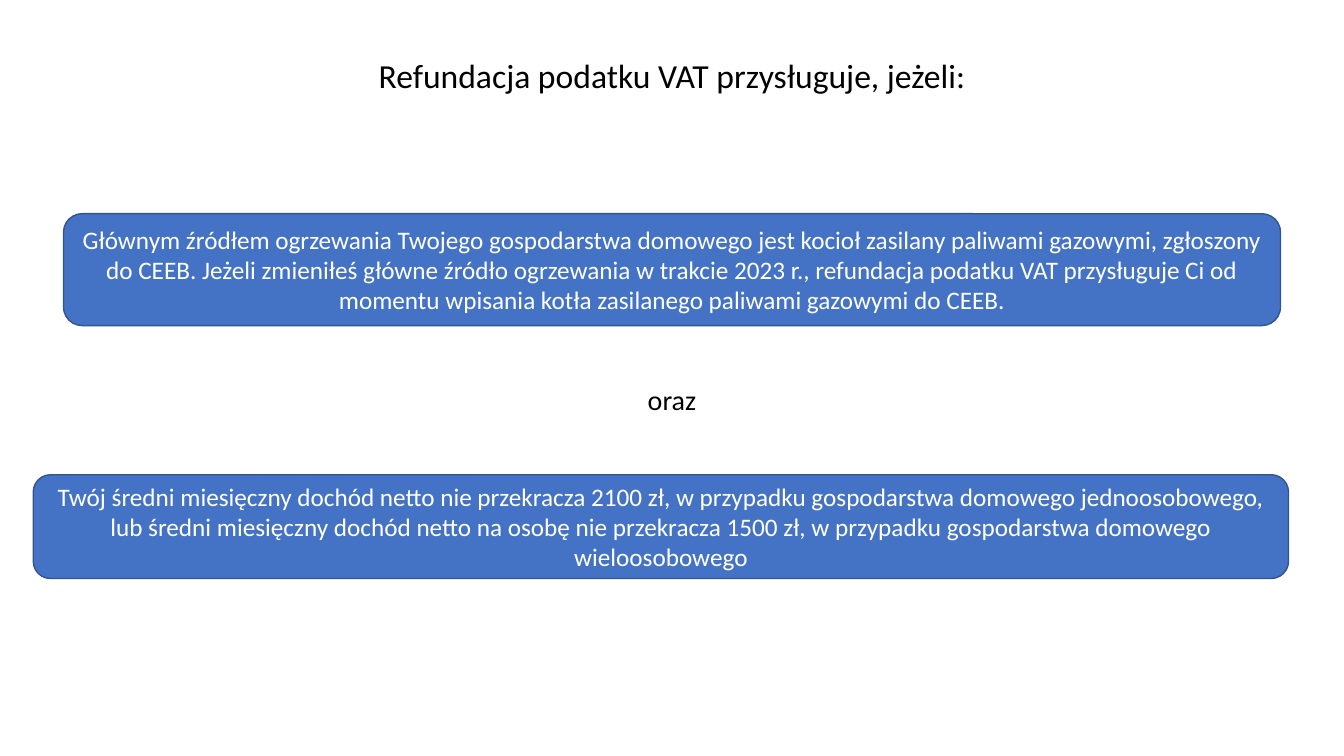
from pptx import Presentation, util as u
from pptx.dml.color import RGBColor
from pptx.enum import shapes, text

BLUE = RGBColor(0x44, 0x72, 0xC4)
NAVY = RGBColor(0x32, 0x54, 0x91)
WHITE = RGBColor(0xFF, 0xFF, 0xFF)
BLACK = RGBColor(0x00, 0x00, 0x00)

GAS_HEATING = (
    "Głównym źródłem ogrzewania Twojego gospodarstwa domowego jest kocioł "
    "zasilany paliwami gazowymi, zgłoszony do CEEB. Jeżeli zmieniłeś główne "
    "źródło ogrzewania w trakcie 2023 r., refundacja podatku VAT przysługuje "
    "Ci od momentu wpisania kotła zasilanego paliwami gazowymi do CEEB."
)
INCOME_LIMIT = (
    "Twój średni miesięczny dochód netto nie przekracza 2100 zł, w przypadku "
    "gospodarstwa domowego jednoosobowego, lub średni miesięczny dochód netto "
    "na osobę nie przekracza 1500 zł, w przypadku gospodarstwa domowego "
    "wieloosobowego"
)


class RefundSlide:
    font = "Calibri"
    columns, rows = 40, 30

    def __init__(self, prs):
        self.col = prs.slide_width / self.columns
        self.row = prs.slide_height / self.rows
        self.s = prs.slides.add_slide(prs.slide_layouts[5])

    def place(self, left, top, width, height):
        return (int(left * self.col), int(top * self.row),
                int(width * self.col), int(height * self.row))

    def set_text(self, sp, words, size, color, anchor):
        tf = sp.text_frame
        tf.word_wrap = True
        tf.vertical_anchor = anchor
        p = tf.paragraphs[0]
        p.alignment = text.PP_ALIGN.CENTER
        r = p.add_run()
        r.text = words
        r.font.name = self.font
        r.font.size = u.Pt(size)
        r.font.color.rgb = color
        return tf

    def title(self, words, *cell):
        sp = self.s.shapes.title
        sp.left, sp.top, sp.width, sp.height = self.place(*cell)
        tf = self.set_text(sp, words, 24, BLACK, text.MSO_ANCHOR.TOP)
        tf.auto_size = text.MSO_AUTO_SIZE.SHAPE_TO_FIT_TEXT

    def label(self, words, *cell):
        sp = self.s.shapes.add_textbox(*self.place(*cell))
        tf = self.set_text(sp, words, 20, BLACK, text.MSO_ANCHOR.TOP)
        tf.auto_size = text.MSO_AUTO_SIZE.SHAPE_TO_FIT_TEXT

    def condition(self, words, *cell):
        sp = self.s.shapes.add_shape(
            shapes.MSO_SHAPE.ROUNDED_RECTANGLE, *self.place(*cell))
        sp.shadow.inherit = False
        sp.fill.solid()
        sp.fill.fore_color.rgb = BLUE
        sp.line.color.rgb = NAVY
        sp.line.width = u.Pt(1)
        self.set_text(sp, words, 18, WHITE, text.MSO_ANCHOR.MIDDLE)


def main():
    prs = Presentation()
    prs.slide_width, prs.slide_height = u.Inches(13.33), u.Inches(7.5)
    slide = RefundSlide(prs)
    slide.title("Refundacja podatku VAT przysługuje, jeżeli:", 10, 1.96, 20, 2)
    slide.condition(GAS_HEATING, 1.89, 8.48, 36.22, 4.44)
    slide.label("oraz", 10, 15, 20, 1.76)
    slide.condition(INCOME_LIMIT, 0.99, 18.84, 37.36, 4.12)
    prs.save("out.pptx")


if __name__ == "__main__":
    main()
